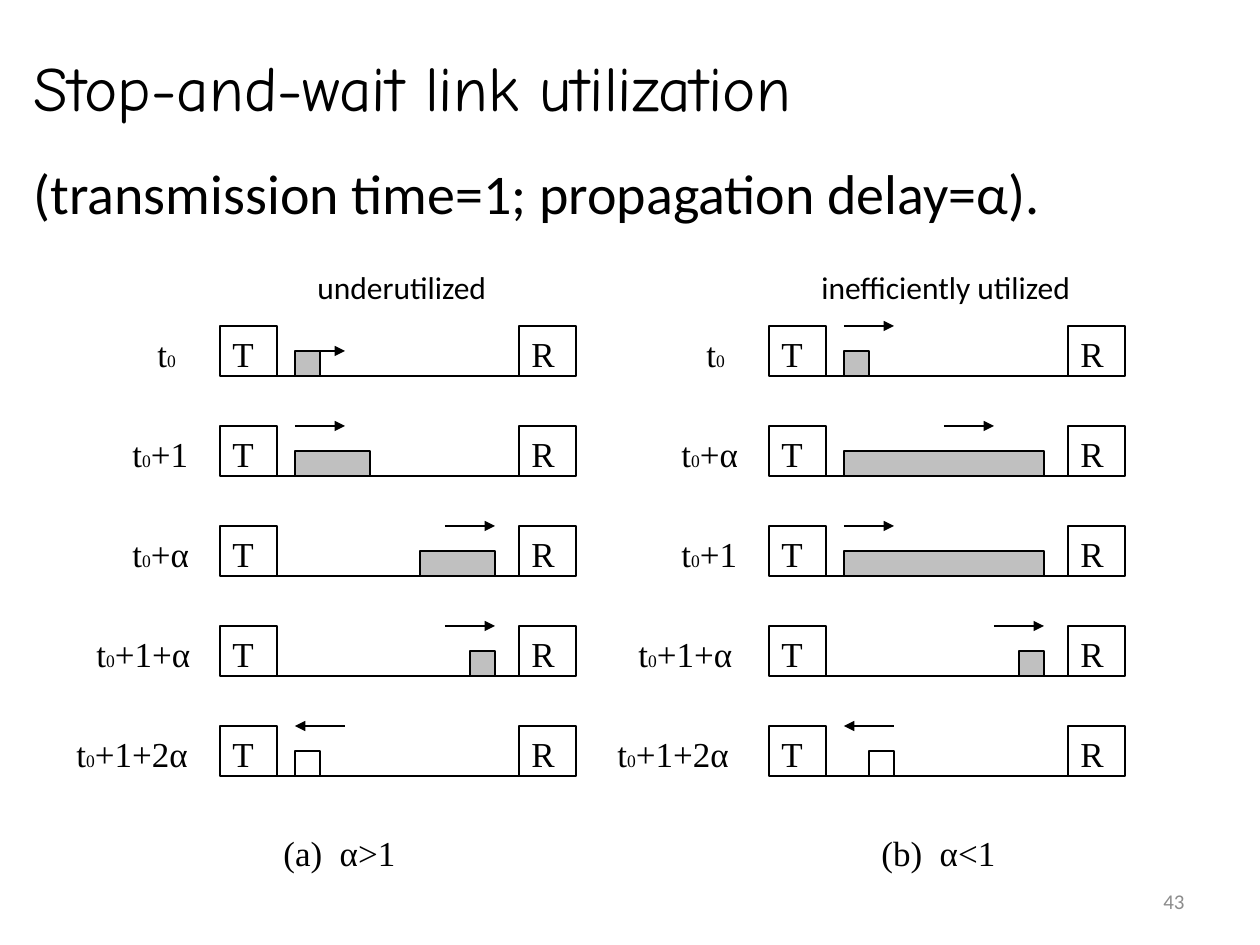
from lxml import etree
from pptx import Presentation
from pptx.dml.color import RGBColor
from pptx.enum.shapes import MSO_CONNECTOR, MSO_SHAPE
from pptx.enum.text import MSO_ANCHOR, PP_ALIGN
from pptx.oxml.ns import qn
from pptx.util import Emu, Pt

RECT, STRAIGHT = MSO_SHAPE.RECTANGLE, MSO_CONNECTOR.STRAIGHT
TOP, MIDDLE = MSO_ANCHOR.TOP, MSO_ANCHOR.MIDDLE
LEFT, RIGHT = PP_ALIGN.LEFT, PP_ALIGN.RIGHT
PX = 914400 / 126
SERIF, SANS, COMIC = "Times New Roman", "Calibri", "Comic Neue"
BLACK, WHITE, GRAY, MUTED = "000000", "FFFFFF", "C0C0C0", "8C8C8C"

prs = Presentation()
prs.slide_width, prs.slide_height = Emu(round(1260 * PX)), Emu(round(945 * PX))
s = prs.slides.add_slide(prs.slide_layouts[5])


def rect(x, y, w, h, fill=WHITE, outlined=True, runs=()):
    """Add a rectangle; runs are (text, size) pairs set in the serif font."""
    sp = s.shapes.add_shape(RECT, *[Emu(round(v * PX)) for v in (x, y, w, h)])
    sp.shadow.inherit = False
    if fill:
        sp.fill.solid()
        sp.fill.fore_color.rgb = RGBColor.from_string(fill)
    else:
        sp.fill.background()
    if outlined:
        sp.line.color.rgb = RGBColor.from_string(BLACK)
        sp.line.width = Pt(0.75)
    else:
        sp.line.fill.background()
    sp.text_frame.vertical_anchor = TOP
    p = sp.text_frame.paragraphs[0]
    p.alignment = LEFT
    for text, size in runs:
        r = p.add_run()
        r.text = text
        r.font.name, r.font.size = SERIF, Pt(size)
        r.font.color.rgb = RGBColor.from_string(BLACK)


def line(x1, x2, y, arrow=False):
    """Add a horizontal line, with an arrowhead at x2 if asked."""
    cx = s.shapes.add_connector(STRAIGHT, *[Emu(round(v * PX)) for v in (x1, y, x2, y)])
    cx.line.color.rgb = RGBColor.from_string(BLACK)
    cx.line.width = Pt(0.75)
    if arrow:
        etree.SubElement(cx.line._get_or_add_ln(), qn("a:tailEnd"), type="triangle")
    etree.SubElement(cx._element.spPr, qn("a:effectLst"))


# Title and subtitle share the title placeholder
title = s.shapes.title
title.left, title.top, title.width, title.height = [
    Emu(round(v * PX)) for v in (21, 42, 1239, 189)]
tf = title.text_frame
tf.word_wrap = True
tf.vertical_anchor = TOP
for i, (text, font, size) in enumerate([
        ("Stop-and-wait link utilization", COMIC, 36),
        ("(transmission time=1; propagation delay=α).", SANS, 32)]):
    p = tf.add_paragraph() if i else tf.paragraphs[0]
    p.alignment = LEFT
    p.space_before = Pt(20 * i)
    r = p.add_run()
    r.text = text
    r.font.name, r.font.size = font, Pt(size)
    r.font.color.rgb = RGBColor.from_string(BLACK)

# Column headings and page number
for text, x, y, w, size, color, align, anchor in [
        ("underutilized", 305, 262, 231, 18, BLACK, LEFT, TOP),
        ("inefficiently utilized", 809, 262, 294, 18, BLACK, LEFT, TOP),
        ("43", 903, 876, 294, 12, MUTED, RIGHT, MIDDLE)]:
    tb = s.shapes.add_textbox(*[Emu(round(v * PX)) for v in (x, y, w, 50)])
    tf = tb.text_frame
    tf.word_wrap = True
    tf.vertical_anchor = anchor
    p = tf.paragraphs[0]
    p.alignment = align
    r = p.add_run()
    r.text = text
    r.font.name, r.font.size = SANS, Pt(size)
    r.font.color.rgb = RGBColor.from_string(color)

# Timelines: time suffix, label width, packet offset and width,
# packet fill, arrow start and end, arrow drop below the row top
underutilized = [
    ("", 75, 75, 25, GRAY, 75, 125, 25),
    ("+1", 100, 75, 75, GRAY, 75, 125, 0),
    ("+α", 100, 200, 75, GRAY, 225, 275, 0),
    ("+1+α", 136, 250, 25, GRAY, 225, 275, 0),
    ("+1+2α", 156, 75, 25, None, 125, 75, 0),
]
inefficient = [
    ("", 75, 75, 25, GRAY, 75, 125, 0),
    ("+α", 100, 75, 200, GRAY, 175, 225, 0),
    ("+1", 100, 75, 200, GRAY, 75, 125, 0),
    ("+1+α", 143, 250, 25, GRAY, 225, 275, 0),
    ("+1+2α", 164, 100, 25, None, 125, 75, 0),
]
for x, caption, caption_x, rows in [
        (220, "(a)  α>1", 271, underutilized),
        (769, "(b)  α<1", 869, inefficient)]:
    for i, (suffix, label_w, packet_x, packet_w, fill, start, end, drop) in enumerate(rows):
        y = 326 + 100 * i
        label = [("t", 20), ("0", 10)] + ([(suffix, 20)] if suffix else [])
        rect(x - label_w, y, label_w, 50, outlined=False, runs=label)
        rect(x, y, 57, 50, runs=[("T", 20)])
        rect(x + 299, y, 57, 50, runs=[("R", 20)])
        rect(x + packet_x, y + 25, packet_w, 25, fill)
        line(x + 50, x + 299, y + 50)
        line(x + start, x + end, y + drop, arrow=True)
    rect(caption_x, 825, 150, 74, outlined=False, runs=[(caption, 20)])

prs.save("out.pptx")
